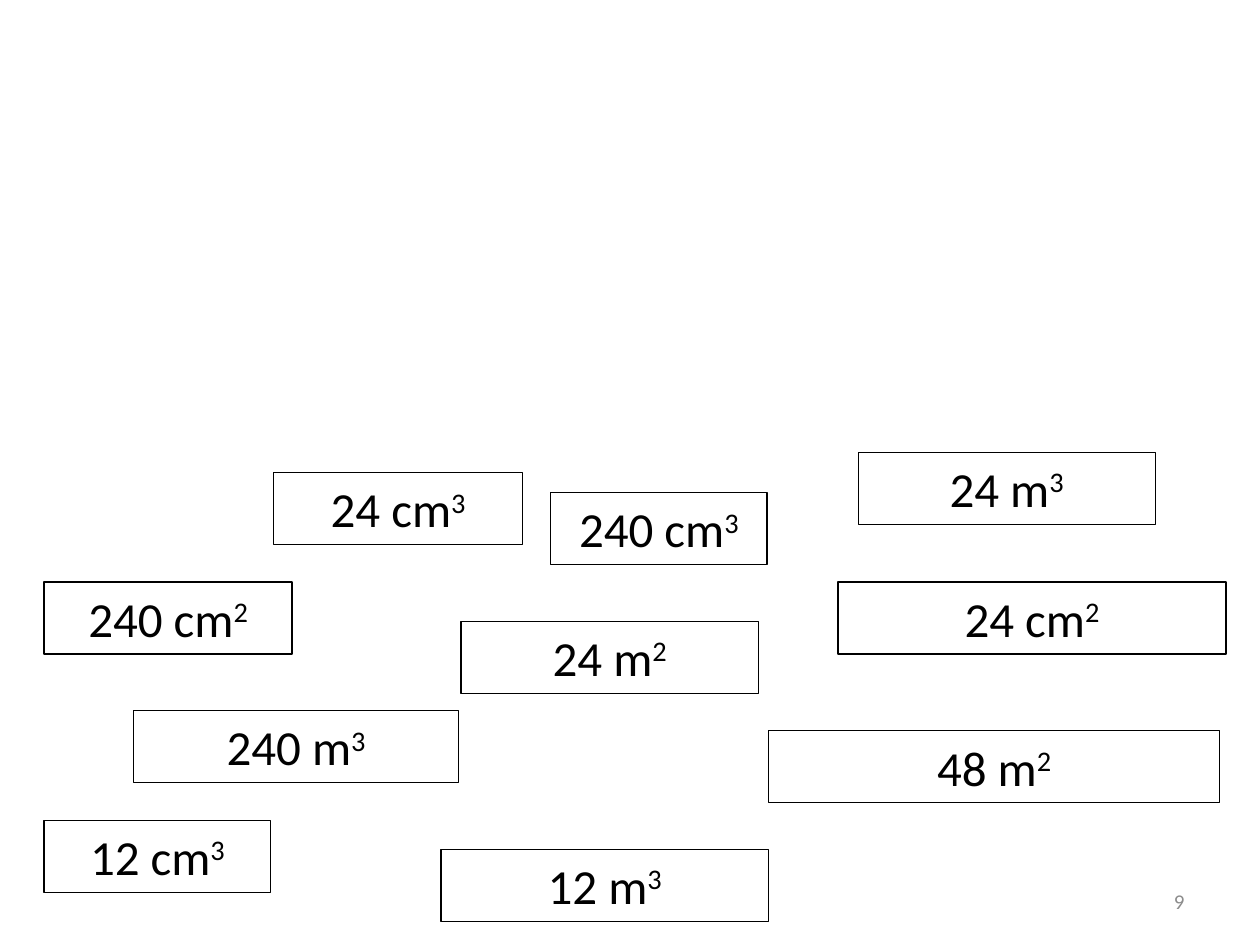
from typing import NamedTuple, Optional

from pptx import Presentation
from pptx.dml.color import RGBColor
from pptx.enum.shapes import MSO_SHAPE
from pptx.enum.text import MSO_ANCHOR, MSO_AUTO_SIZE, PP_ALIGN
from pptx.util import Pt

RECTANGLE = MSO_SHAPE.RECTANGLE
TOP, MIDDLE = MSO_ANCHOR.TOP, MSO_ANCHOR.MIDDLE
GROW = MSO_AUTO_SIZE.SHAPE_TO_FIT_TEXT
CENTER, RIGHT = PP_ALIGN.CENTER, PP_ALIGN.RIGHT

BLACK = RGBColor(0x00, 0x00, 0x00)
WHITE = RGBColor(0xFF, 0xFF, 0xFF)
GRAY = RGBColor(0x8C, 0x8C, 0x8C)

FONT = "Calibri"
CARD_HEIGHT = 41.2
BLANK_LAYOUT = 6


class Card(NamedTuple):
    left: float
    top: float
    width: float
    quantity: str
    power: str
    fill: Optional[RGBColor] = None
    line_width: float = 0.75


CARDS = [
    Card(25.2, 468.7, 129.6, "12 cm", "3"),
    Card(156.2, 270, 142.6, "24 cm", "3"),
    Card(478.8, 332.6, 221.8, "24 cm", "2"),
    Card(25.2, 332.6, 141.8, "240 cm", "2"),
    Card(252, 485.3, 187.2, "12 m", "3"),
    Card(490.3, 258.5, 169.9, "24 m", "3", WHITE, 0.5),
    Card(263.5, 355, 169.9, "24 m", "2"),
    Card(439.2, 417.6, 257.8, "48 m", "2"),
    Card(314.6, 281.5, 123.8, "240 cm", "3"),
    Card(76.3, 406.1, 185.8, "240 m", "3"),
]


def style_paragraph(paragraph, align: PP_ALIGN, size: float, color: RGBColor) -> None:
    paragraph.alignment = align
    paragraph.font.name = FONT
    paragraph.font.size = Pt(size)
    paragraph.font.color.rgb = color


def add_card(page, card: Card) -> None:
    """Draw a framed measure whose unit carries a raised power."""
    box = page.shapes.add_shape(
        RECTANGLE, Pt(card.left), Pt(card.top), Pt(card.width), Pt(CARD_HEIGHT))
    box.shadow.inherit = False
    if card.fill is None:
        box.fill.background()
    else:
        box.fill.solid()
        box.fill.fore_color.rgb = card.fill
    box.line.color.rgb = BLACK
    box.line.width = Pt(card.line_width)

    frame = box.text_frame
    frame.word_wrap = True
    frame.auto_size = GROW
    frame.vertical_anchor = TOP
    paragraph = frame.paragraphs[0]
    style_paragraph(paragraph, CENTER, 28, BLACK)
    for text in (card.quantity, card.power):
        span = paragraph.add_run()
        span.text = text
        span.font.color.rgb = BLACK
    span._r.get_or_add_rPr().set("baseline", "30000")


def add_page_number(page, number: str) -> None:
    box = page.shapes.add_textbox(Pt(516.2), Pt(500.4), Pt(167.8), Pt(28.8))
    frame = box.text_frame
    frame.word_wrap = True
    frame.vertical_anchor = MIDDLE
    paragraph = frame.paragraphs[0]
    paragraph.text = number
    style_paragraph(paragraph, RIGHT, 12, GRAY)


def main() -> None:
    deck = Presentation()
    deck.slide_width, deck.slide_height = Pt(720), Pt(540)
    page = deck.slides.add_slide(deck.slide_layouts[BLANK_LAYOUT])
    for card in CARDS:
        add_card(page, card)
    add_page_number(page, "9")
    deck.save("out.pptx")


if __name__ == "__main__":
    main()
